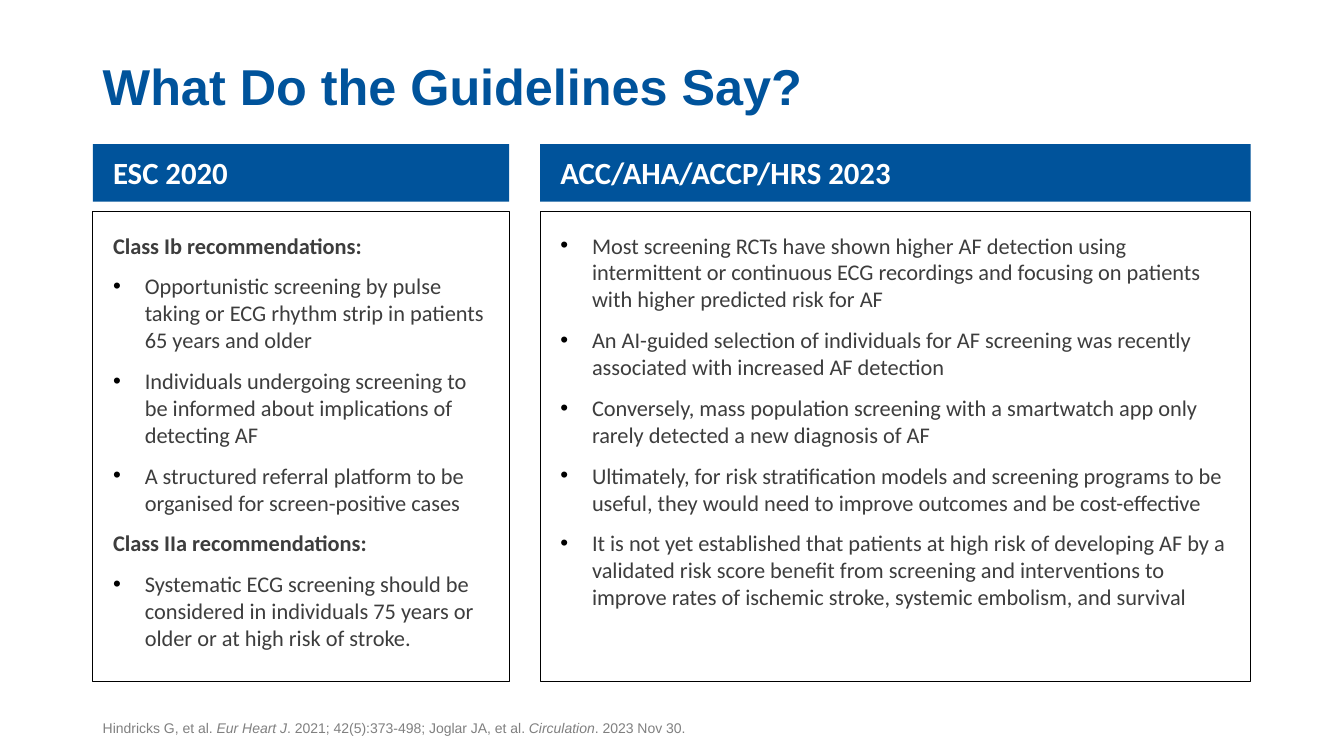
import pptx
import pptx.util
import pptx.dml.color
import pptx.enum.shapes
import pptx.enum.text
import pptx.oxml
import pptx.oxml.ns
from pptx.util import Cm, Pt

RGBColor = pptx.dml.color.RGBColor
BLUE = RGBColor(0x00, 0x53, 0x9B)
DARK = RGBColor(0x3D, 0x3D, 0x3D)
GREY = RGBColor(0x80, 0x80, 0x80)
WHITE = RGBColor(0xFF, 0xFF, 0xFF)
BLACK = RGBColor(0x00, 0x00, 0x00)
ANCHOR = pptx.enum.text.MSO_ANCHOR

LEFT = Cm(2.34)
FULL_WIDTH = Cm(29.21)
INDENT = Cm(0.8)

# Each column: left, width, heading, lines as (is a subheading, text)
COLUMNS = [
    (LEFT, Cm(10.49), "ESC 2020", [
        (True, "Class Ib recommendations:"),
        (False, "Opportunistic screening by pulse taking or ECG rhythm strip in patients 65 years and older"),
        (False, "Individuals undergoing screening to be informed about implications of detecting AF"),
        (False, "A structured referral platform to be organised for screen-positive cases"),
        (True, "Class IIa recommendations:"),
        (False, "Systematic ECG screening should be considered in individuals 75 years or older "
                "or at high risk of stroke."),
    ]),
    (Cm(13.61), Cm(17.91), "ACC/AHA/ACCP/HRS 2023", [
        (False, "Most screening RCTs have shown higher AF detection using intermittent or continuous "
                "ECG recordings and focusing on patients with higher predicted risk for AF"),
        (False, "An AI-guided selection of individuals for AF screening was recently associated "
                "with increased AF detection"),
        (False, "Conversely, mass population screening with a smartwatch app only rarely detected "
                "a new diagnosis of AF"),
        (False, "Ultimately, for risk stratification models and screening programs to be useful, "
                "they would need to improve outcomes and be cost-effective"),
        (False, "It is not yet established that patients at high risk of developing AF by a validated "
                "risk score benefit from screening and interventions to improve rates of ischemic "
                "stroke, systemic embolism, and survival"),
    ]),
]

# Footer runs as (is italic, text)
CITATION = [
    (False, "Hindricks G, et al. "),
    (True, "Eur Heart J"),
    (False, ". 2021; 42(5):373-498; Joglar JA, et al. "),
    (True, "Circulation"),
    (False, ". 2023 Nov 30."),
]


def style(para, name, size, color, bold=False):
    para.alignment = pptx.enum.text.PP_ALIGN.LEFT
    para.font.name = name
    para.font.size = Pt(size)
    para.font.color.rgb = color
    para.font.bold = bold


def add_panel(left, top, width, height, margin, anchor):
    panel = page.shapes.add_shape(pptx.enum.shapes.MSO_SHAPE.RECTANGLE, left, top, width, height)
    panel.shadow.inherit = False
    frame = panel.text_frame
    frame.word_wrap = True
    frame.vertical_anchor = anchor
    frame.margin_left = frame.margin_right = Cm(0.51)
    frame.margin_top = frame.margin_bottom = margin
    return panel


deck = pptx.Presentation()
deck.slide_width = Cm(33.87)
deck.slide_height = Cm(19.05)
page = deck.slides.add_slide(deck.slide_layouts[6])

# Title
title = page.shapes.add_textbox(LEFT, 0, FULL_WIDTH, Cm(3.07)).text_frame
title.word_wrap = True
title.vertical_anchor = ANCHOR.BOTTOM
para = title.paragraphs[0]
para.text = "What Do the Guidelines Say?"
para.line_spacing = 0.9
style(para, "Arial", 36, BLUE, bold=True)

for left, width, heading, lines in COLUMNS:
    # Column heading
    header = add_panel(left, Cm(3.63), width, Cm(1.45), Cm(0.25), ANCHOR.TOP)
    header.fill.solid()
    header.fill.fore_color.rgb = BLUE
    header.line.fill.background()
    para = header.text_frame.paragraphs[0]
    para.text = heading
    style(para, "Calibri", 22, WHITE, bold=True)

    # Column body
    body = add_panel(left, Cm(5.33), width, Cm(11.84), Cm(0.51), ANCHOR.TOP)
    body.fill.background()
    body.line.color.rgb = BLACK
    body.line.width = Pt(0.75)
    for index, (is_subheading, text) in enumerate(lines):
        para = body.text_frame.add_paragraph() if index else body.text_frame.paragraphs[0]
        para.text = text
        para.space_before = Pt(10 if index else 0)
        if not is_subheading:
            properties = para._p.get_or_add_pPr()
            properties.set("marL", str(INDENT))
            properties.set("indent", str(-INDENT))
            namespace = pptx.oxml.ns.nsdecls("a")
            for bullet in (f'<a:buClr {namespace}><a:srgbClr val="{BLACK}"/></a:buClr>',
                           f'<a:buFont {namespace} typeface="Arial"/>',
                           f'<a:buChar {namespace} char="•"/>'):
                properties.append(pptx.oxml.parse_xml(bullet))
        style(para, "Calibri", 16, DARK, bold=is_subheading)

# Citation
footer = page.shapes.add_textbox(LEFT, Cm(17.65), FULL_WIDTH, Cm(1.02)).text_frame
footer.word_wrap = True
footer.vertical_anchor = ANCHOR.BOTTOM
para = footer.paragraphs[0]
for is_italic, text in CITATION:
    span = para.add_run()
    span.text = text
    span.font.italic = is_italic
style(para, "Arial", 10, GREY)

deck.save("out.pptx")
